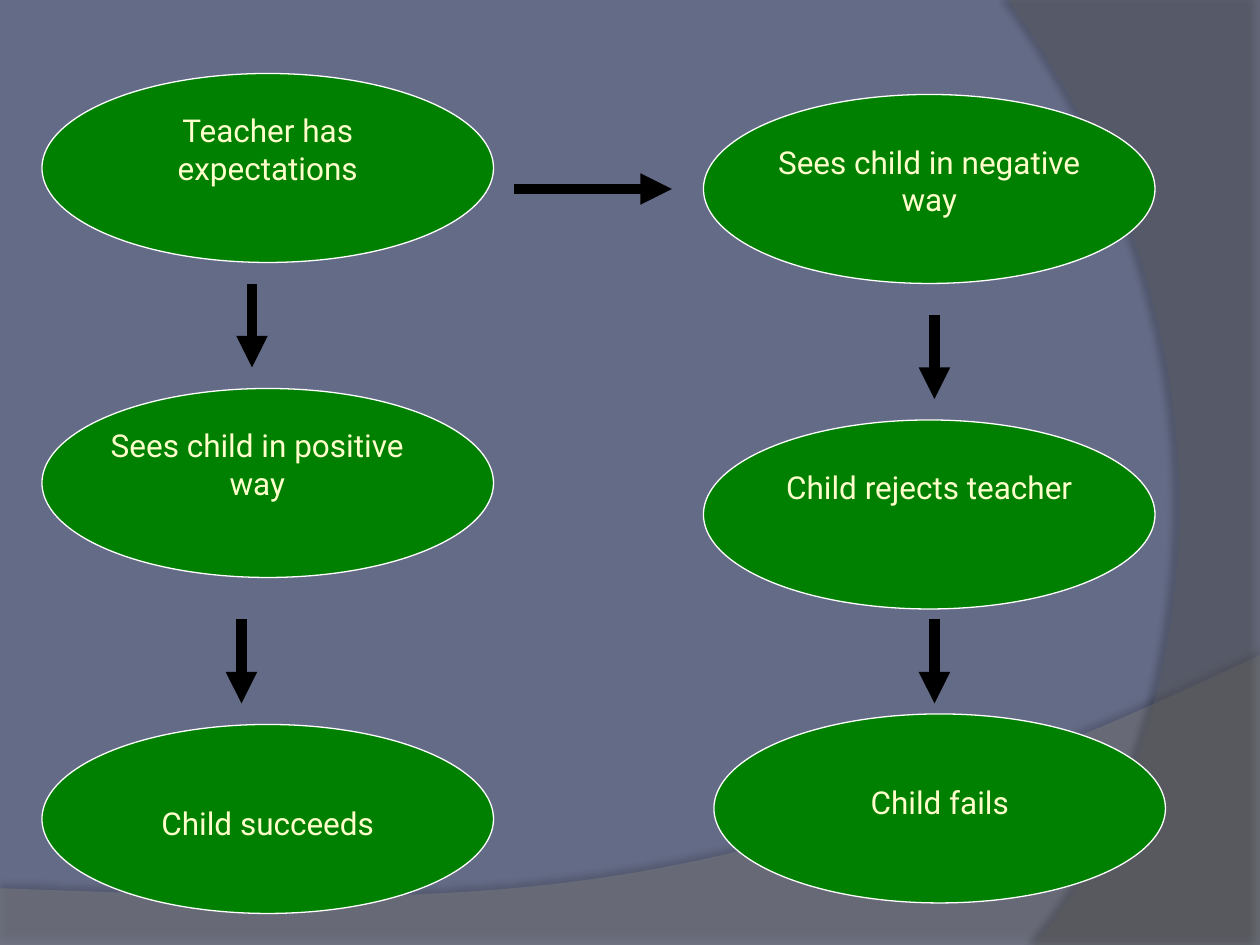
"""Build a flow slide showing how teacher expectations shape a child's outcome."""
from lxml.etree import SubElement
from pptx import Presentation
from pptx.dml.color import RGBColor
from pptx.enum.shapes import MSO_CONNECTOR as Connector, MSO_SHAPE as Shape
from pptx.enum.text import MSO_AUTO_SIZE as AutoSize, PP_ALIGN as Align
from pptx.oxml.ns import qn
from pptx.util import Pt

BACKGROUND = RGBColor(0x64, 0x6B, 0x86)
WAVE_GRAY = RGBColor(0x7F, 0x7F, 0x7F)
ARC_GRAY = RGBColor(0x5E, 0x5E, 0x5E)
GREEN = RGBColor(0x00, 0x80, 0x00)
CREAM = RGBColor(0xFF, 0xFF, 0xCC)
WHITE = RGBColor(0xFF, 0xFF, 0xFF)
BLACK = RGBColor(0x00, 0x00, 0x00)

OVAL_WIDTH, OVAL_HEIGHT = 258, 108
LABEL_WIDTH = 198
ONE_LINE, TWO_LINES = 36, 64.8
CURVE_STEPS = 40

FONT_FORMAT = {"name": "Roboto", "size": Pt(18)}
FRAME_FORMAT = {"word_wrap": True, "auto_size": AutoSize.SHAPE_TO_FIT_TEXT}

STEPS = [
    ("Teacher has expectations", (24, 42), (54, 60), TWO_LINES),
    ("Sees child in positive way", (24, 222), (48, 240), TWO_LINES),
    ("Child succeeds", (24, 414), (54, 456), ONE_LINE),
    ("Sees child in negative way", (402, 54), (432, 78), TWO_LINES),
    ("Child rejects teacher", (402, 240), (432, 264), TWO_LINES),
    ("Child fails", (408, 408), (438, 444), ONE_LINE),
]
ARROWS = [
    ((138, 354), (138, 402)),
    ((294, 108), (384, 108)),
    ((144, 162), (144, 210)),
    ((534, 180), (534, 228)),
    ((534, 354), (534, 402)),
]


def apply_format(target, values):
    """Set every attribute named in values on the target."""
    for name, value in values.items():
        setattr(target, name, value)


def curve_points(start, control_1, control_2, end):
    """Return points along a cubic curve, both ends included."""
    points = []
    for step in range(CURVE_STEPS + 1):
        t = step / CURVE_STEPS
        weights = ((1 - t) ** 3, 3 * t * (1 - t) ** 2, 3 * t * t * (1 - t), t ** 3)
        controls = (start, control_1, control_2, end)
        points.append(tuple(sum(w * p[axis] for w, p in zip(weights, controls)) for axis in (0, 1)))
    return points


def set_alpha(color_element, percent):
    """Give a colour element an opacity."""
    SubElement(color_element, qn("a:alpha"), val=str(percent * 1000))


def add_backdrop(slide, points, color, opacity, shadow_opacity, distance, angle):
    """Add a translucent outline with a soft shadow."""
    (first_x, first_y), *others = [(Pt(x), Pt(y)) for x, y in points]
    builder = slide.shapes.build_freeform(first_x, first_y)
    builder.add_line_segments(others, close=True)
    shape = builder.convert_to_shape()
    shape.fill.solid()
    shape.fill.fore_color.rgb = color
    shape.line.fill.background()
    shape.shadow.inherit = False
    properties = shape.element.spPr
    set_alpha(properties.find(qn("a:solidFill"))[0], opacity)
    shadow = SubElement(
        properties.find(qn("a:effectLst")), qn("a:outerShdw"),
        blurRad=str(Pt(4)), dist=str(Pt(distance)), dir=str(angle * 60000), rotWithShape="0",
    )
    set_alpha(SubElement(shadow, qn("a:srgbClr"), val=str(BLACK)), shadow_opacity)


def add_oval(slide, left, top):
    """Add a green oval with a thin white outline."""
    shape = slide.shapes.add_shape(Shape.OVAL, Pt(left), Pt(top), Pt(OVAL_WIDTH), Pt(OVAL_HEIGHT))
    shape.shadow.inherit = False
    shape.fill.solid()
    shape.fill.fore_color.rgb = GREEN
    shape.line.color.rgb = WHITE
    shape.line.width = Pt(0.75)


def add_label(slide, text, left, top, height):
    """Add a centred label."""
    box = slide.shapes.add_textbox(Pt(left), Pt(top), Pt(LABEL_WIDTH), Pt(height))
    apply_format(box.text_frame, FRAME_FORMAT)
    paragraph = box.text_frame.paragraphs[0]
    paragraph.alignment = Align.CENTER
    run = paragraph.add_run()
    run.text = text
    apply_format(run.font, FONT_FORMAT)
    run.font.color.rgb = CREAM


def add_arrow(slide, start, end):
    """Add a thick black arrow."""
    arrow = slide.shapes.add_connector(Connector.STRAIGHT, *map(Pt, start + end))
    arrow.line.color.rgb = BLACK
    arrow.line.width = Pt(6)
    SubElement(arrow.line._get_or_add_ln(), qn("a:tailEnd"), type="triangle")
    SubElement(arrow._element.spPr, qn("a:effectLst"))


def main():
    """Build and save the slide."""
    presentation = Presentation()
    apply_format(presentation, {"slide_width": Pt(720), "slide_height": Pt(540)})
    slide = presentation.slides.add_slide(presentation.slide_layouts[6])
    slide.background.fill.solid()
    slide.background.fill.fore_color.rgb = BACKGROUND

    wave = curve_points((720, 374.4), (402.5, 524.9), (281.5, 517.7), (0, 507.6))
    add_backdrop(slide, [(0, 540), (720, 540)] + wave, WAVE_GRAY, 45, 35, 3.5, 270)
    arc = curve_points((591, 540), (673.2, 445.7), (733, 216), (576, 0))
    add_backdrop(slide, [(720, 0), (720, 540)] + arc, ARC_GRAY, 40, 45, 4, 180)

    for text, oval_corner, label_corner, label_height in STEPS:
        add_oval(slide, *oval_corner)
        add_label(slide, text, *label_corner, label_height)
    for start, end in ARROWS:
        add_arrow(slide, start, end)

    presentation.save("out.pptx")


if __name__ == "__main__":
    main()
